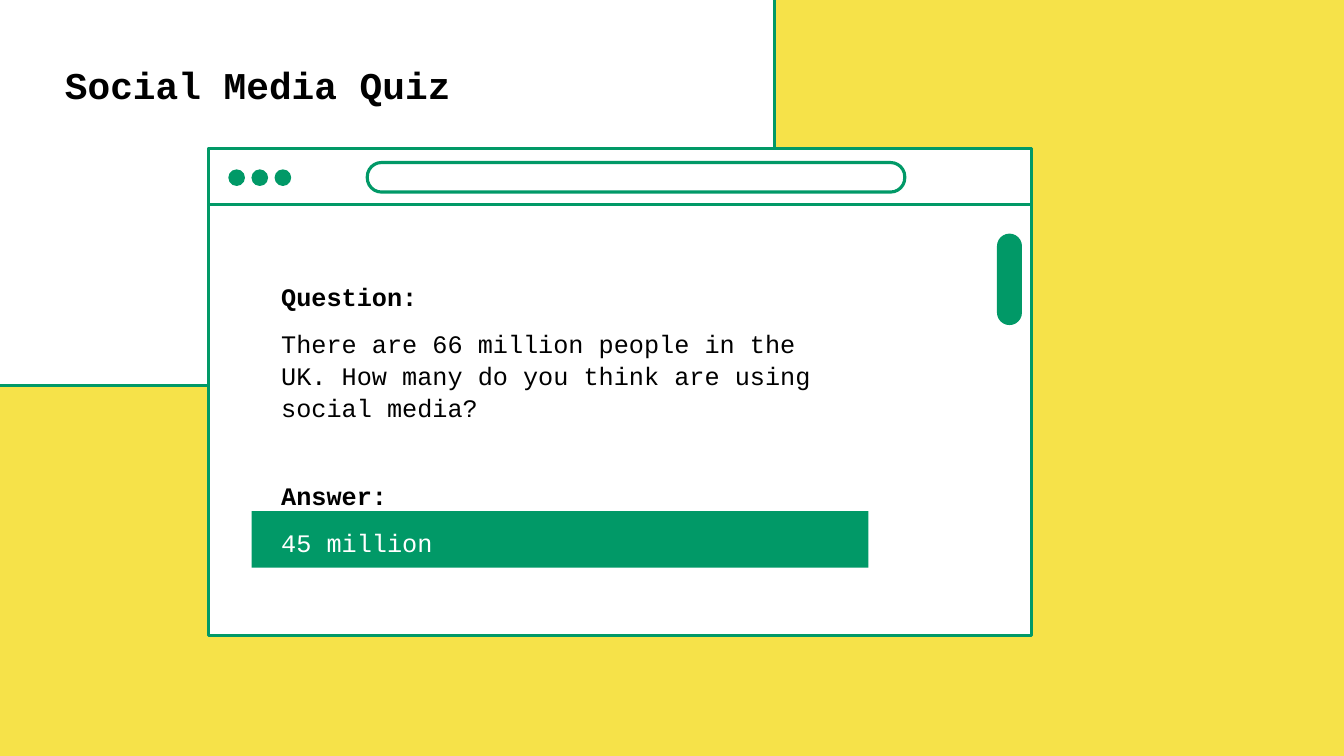
from pptx import Presentation
from pptx.dml.color import RGBColor
from pptx.enum.shapes import MSO_SHAPE
from pptx.enum.text import MSO_ANCHOR, MSO_AUTO_SIZE, PP_ALIGN
from pptx.util import Inches, Pt

RECT, ROUND, OVAL = MSO_SHAPE.RECTANGLE, MSO_SHAPE.ROUNDED_RECTANGLE, MSO_SHAPE.OVAL
TOP, LEFT, NO_FIT = MSO_ANCHOR.TOP, PP_ALIGN.LEFT, MSO_AUTO_SIZE.NONE
FONT = "Courier New"
COLORS = {
    name: RGBColor.from_string(value)
    for name, value in {
        "yellow": "F6E249", "green": "019967", "white": "FFFFFF", "black": "000000",
    }.items()
}

prs = Presentation()
prs.slide_width, prs.slide_height = Inches(17.78), Inches(10)
COL, ROW = prs.slide_width / 100, prs.slide_height / 100
s = prs.slides.add_slide(prs.slide_layouts[5])
s.background.fill.solid()
s.background.fill.fore_color.rgb = COLORS["yellow"]


def add_box(shapes, kind, x, y, w, h, fill=None, line=0):
    sp = shapes.add_shape(kind, int(x * COL), int(y * ROW), int(w * COL), int(h * ROW))
    sp.shadow.inherit = False
    if fill:
        sp.fill.solid()
        sp.fill.fore_color.rgb = COLORS[fill]
    else:
        sp.fill.background()
    if line:
        sp.line.color.rgb = COLORS["green"]
        sp.line.width = Pt(line)
    else:
        sp.line.fill.background()
    return sp


def add_text(shapes, y, h, heading, body, body_color):
    sp = shapes.add_textbox(int(20.19 * COL), int(y * ROW), int(43.36 * COL), int(h * ROW))
    tf = sp.text_frame
    tf.word_wrap = True
    tf.margin_left = tf.margin_right = Inches(0.13)
    tf.margin_top = tf.margin_bottom = Inches(0.07)
    tf.text = f"{heading}\n{body}"
    for p, bold, color in zip(tf.paragraphs, (True, False), ("black", body_color)):
        p.space_after = Pt(15)
        p.line_spacing = 1.05
        p.font.name, p.font.size, p.font.bold = FONT, Pt(24), bold
        p.font.color.rgb = COLORS[color]


panel = add_box(s.shapes, RECT, -3.6, -2.5, 61.25, 53.5, "white", 2.75)

window = s.shapes.add_group_shape().shapes
add_box(window, RECT, 15.52, 19.7, 61.25, 64.4, "white", 3)
add_box(window, RECT, 15.52, 19.7, 61.25, 7.4, "white", 3)
scrollbar = add_box(window, ROUND, 74.18, 30.9, 1.86, 12.1, "green")
scrollbar.adjustments[0] = 0.5
for i in range(3):
    add_box(window, OVAL, 16.99 + 1.72 * i, 22.4, 1.24, 2.2, "green")
address = add_box(window, ROUND, 27.33, 21.5, 39.99, 3.9, line=3)
address.adjustments[0] = 0.48
add_text(
    window, 36.3, 19.7, "Question:",
    "There are 66 million people in the UK. How many do you think are using social media?",
    "black",
)

title = s.shapes.title
title.left, title.top = int(4.27 * COL), int(6.7 * ROW)
title.width, title.height = int(30.71 * COL), int(5.8 * ROW)
panel.element.addnext(title.element)
tf = title.text_frame
tf.text = "Social Media Quiz"
tf.word_wrap, tf.auto_size, tf.vertical_anchor = True, NO_FIT, TOP
tf.margin_top, tf.margin_bottom = Inches(0.14), 0
p = tf.paragraphs[0]
p.alignment = LEFT
p.font.name, p.font.size, p.font.bold = FONT, Pt(36), True
p.font.color.rgb = COLORS["black"]

answer = s.shapes.add_group_shape().shapes
add_box(answer, RECT, 18.73, 67.6, 45.89, 7.5, "green")
add_text(answer, 62.6, 11.1, "Answer:", "45 million", "white")

prs.save("out.pptx")
